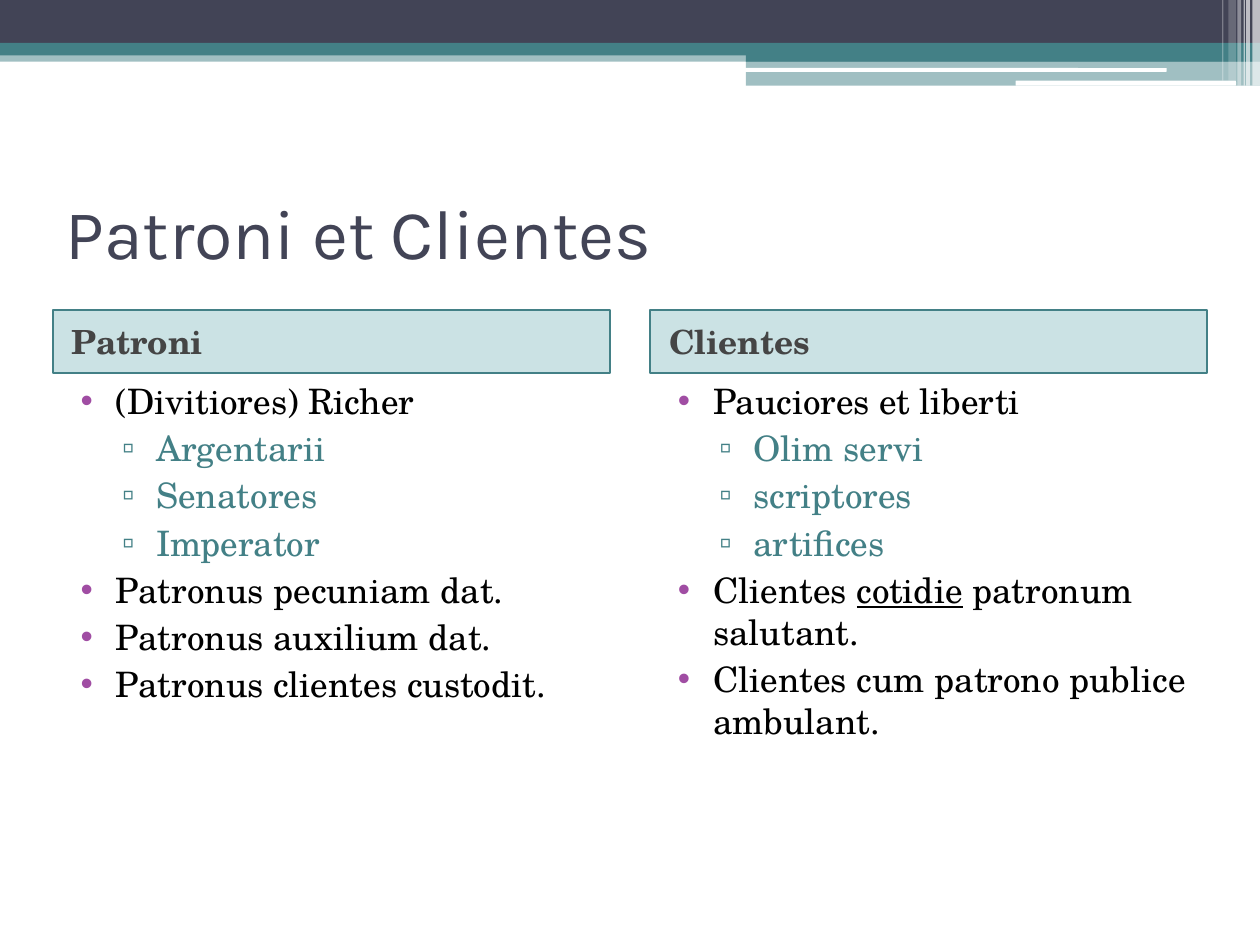
from dataclasses import dataclass
from lxml import etree
from pptx import Presentation
from pptx import util as u
from pptx.dml.color import RGBColor
from pptx.enum import shapes, text
from pptx.oxml.ns import qn


@dataclass(frozen=True)
class Theme:
    ink: str = "424456"
    teal: str = "438086"
    tint: str = "328E97"
    white: str = "FFFFFF"
    black: str = "000000"
    gray: str = "454545"
    plum: str = "A04DA3"
    head: str = "Karla"
    body: str = "TeX Gyre Schola"
    big: int = 40
    mid: int = 20
    small: int = 19


T = Theme()
LEVELS = [
    dict(color=T.black, mark="•", tone=T.plum, left=0.4, hang=-0.28),
    dict(color=T.teal, mark="▫", tone=T.teal, left=0.72, hang=-0.27),
]
BANDS = [
    (0, 0.4, 10, 0.09, T.teal, 50),
    (0, 0, 10, 0.34, T.ink, 100),
    (0, 0.34, 10, 0.1, T.teal, 100),
    (5.92, 0.39, 4.08, 0.1, T.teal, 100),
    (5.92, 0.48, 4.08, 0.2, T.teal, 50),
]
PILLS = [(5.91, 0.54, 3.35, 0.03), (8.06, 0.64, 1.75, 0.04)]
STRIPES = [
    (9.94, 0.06, 0.68, 65),
    (9.89, 0.03, 0.68, 65),
    (9.87, 0.01, 0.68, 60),
    (9.82, 0.03, 0.68, 40),
    (9.75, 0.06, 0.64, 20),
    (9.7, 0.01, 0.64, 30),
]
COLUMNS = [
    (0.42, "Patroni", [
        (0, ["(Divitiores) Richer"]),
        (1, ["Argentarii"]),
        (1, ["Senatores"]),
        (1, ["Imperator"]),
        (0, ["Patronus pecuniam dat."]),
        (0, ["Patronus auxilium dat."]),
        (0, ["Patronus clientes custodit."]),
    ]),
    (5.16, "Clientes", [
        (0, ["Pauciores et liberti"]),
        (1, ["Olim servi"]),
        (1, ["scriptores"]),
        (1, ["artifices"]),
        (0, ["Clientes ", "cotidie", " patronum salutant."]),
        (0, ["Clientes cum patrono publice ambulant."]),
    ]),
]


def put(item, vals):
    for key, val in vals.items():
        setattr(item, key, val)


def paint(shape, color, alpha=100):
    shape.fill.solid()
    shape.fill.fore_color.rgb = RGBColor.from_string(color)
    if alpha < 100:
        tag = shape._element.spPr.find(qn("a:solidFill"))[0]
        etree.SubElement(tag, qn("a:alpha"), val=str(alpha * 1000))


def add_bar(slide, box, color, alpha=100, kind=shapes.MSO_SHAPE.RECTANGLE):
    bar = slide.shapes.add_shape(kind, *map(u.Inches, box))
    bar.shadow.inherit = False
    bar.line.fill.background()
    paint(bar, color, alpha)


def place(holder, box, anchor):
    sides = ("left", "top", "width", "height")
    put(holder, dict(zip(sides, map(u.Inches, box))))
    put(holder.text_frame, dict(
        word_wrap=True, vertical_anchor=anchor,
        auto_size=text.MSO_AUTO_SIZE.NONE))
    return holder.text_frame


def add_run(para, words, color, **style):
    run = para.add_run()
    run.text = words
    put(run.font, style)
    run.font.color.rgb = RGBColor.from_string(color)


def format_para(para, left=0, hang=0, before=0):
    put(para, dict(alignment=text.PP_ALIGN.LEFT, space_before=u.Pt(before)))
    props = para._p.get_or_add_pPr()
    props.set("marL", str(u.Inches(left)))
    props.set("indent", str(u.Inches(hang)))
    return props


def add_title(holder, words):
    frame = place(holder, (0.42, 1.25, 9.17, 1.17), text.MSO_ANCHOR.MIDDLE)
    para = frame.paragraphs[0]
    format_para(para)
    add_run(para, words, T.ink, name=T.head, size=u.Pt(T.big), bold=False)


def add_header(holder, left, words):
    frame = place(holder, (left, 2.46, 4.42, 0.5), text.MSO_ANCHOR.MIDDLE)
    paint(holder, T.tint, 25)
    holder.line.color.rgb = RGBColor.from_string(T.teal)
    holder.line.width = u.Pt(1)
    para = frame.paragraphs[0]
    format_para(para, left=0.05, before=3)
    add_run(para, words, T.gray, name=T.body, size=u.Pt(T.small), bold=True)


def add_list(holder, left, items):
    frame = place(holder, (left, 2.96, 4.42, 4.25), text.MSO_ANCHOR.TOP)
    for row, (level, parts) in enumerate(items):
        para = frame.add_paragraph() if row else frame.paragraphs[0]
        para.level = level
        look = LEVELS[level]
        props = format_para(para, look["left"], look["hang"], 3)
        tone = etree.SubElement(props, qn("a:buClr"))
        etree.SubElement(tone, qn("a:srgbClr"), val=look["tone"])
        etree.SubElement(props, qn("a:buChar"), char=look["mark"])
        for words in parts:
            add_run(para, words, look["color"], name=T.body,
                    size=u.Pt(T.mid), underline=words == "cotidie")


def add_banner(slide):
    for *box, color, alpha in BANDS:
        add_bar(slide, box, color, alpha)
    for box in PILLS:
        add_bar(slide, box, T.white, kind=shapes.MSO_SHAPE.ROUNDED_RECTANGLE)
    for left, width, height, alpha in STRIPES:
        add_bar(slide, (left, 0, width, height), T.white, alpha)


def main():
    deck = Presentation()
    put(deck, dict(slide_width=u.Inches(10), slide_height=u.Inches(7.5)))
    slide = deck.slides.add_slide(deck.slide_layouts.get_by_name("Comparison"))
    add_banner(slide)
    title, *slots = list(slide.placeholders)[:5]
    add_title(title, "Patroni et Clientes")
    for (left, name, items), head, body in zip(COLUMNS, slots[::2], slots[1::2]):
        add_header(head, left, name)
        add_list(body, left, items)
    deck.save("out.pptx")


if __name__ == "__main__":
    main()
